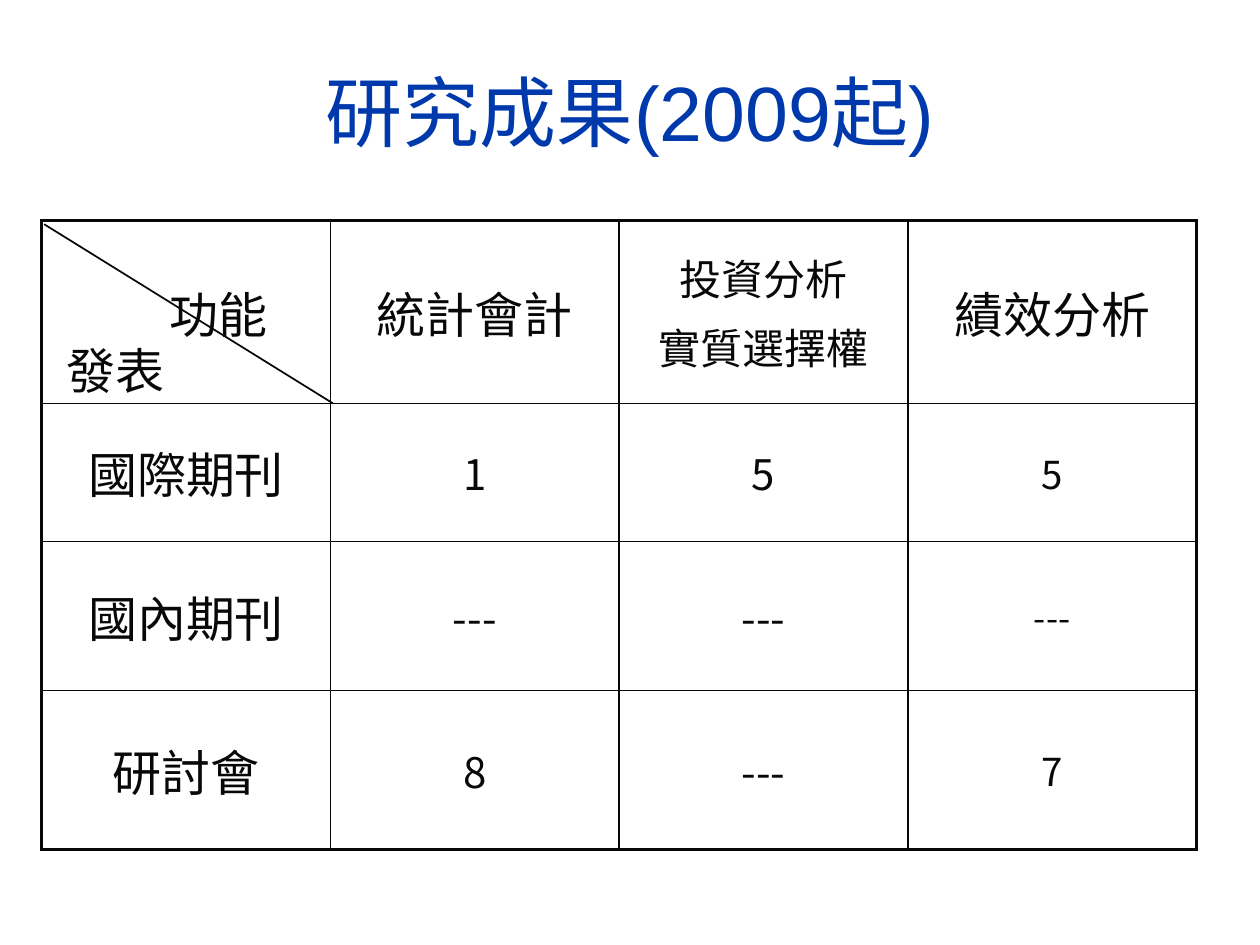
from lxml.etree import SubElement
from pptx import Presentation
from pptx.dml.color import RGBColor
from pptx.enum.shapes import MSO_CONNECTOR
from pptx.enum.text import MSO_ANCHOR as ANCHOR, PP_ALIGN as ALIGN
from pptx.oxml.ns import qn
from pptx.util import Cm, Pt

BLUE = RGBColor(0x00, 0x39, 0xAC)
BLACK = RGBColor(0x08, 0x08, 0x08)
CJK = "Noto Sans CJK SC"

ROWS = [
    [("功能", 28), ("統計會計", 28), ("投資分析\n實質選擇權", 24), ("績效分析", 28)],
    [("國際期刊", 28), ("1", 24), ("5", 24), ("5", 22)],
    [("國內期刊", 28), ("---", 24), ("---", 24), ("---", 20)],
    [("研討會", 28), ("8", 24), ("---", 24), ("7", 22)],
]
ROW_HEIGHTS = [3.68, 2.79, 3.0, 3.2]
COL_WIDTH = 5.82
LEFT, TOP = 0.84, 4.45


class Deck:
    """Hold the style and the current slide, and draw each kind of element."""

    def __init__(self, prs):
        self.s = prs.slides.add_slide(prs.slide_layouts[6])
        self.thin, self.thick = Pt(1), Pt(2.25)

    def fill_text(self, tf, text, size, color=BLACK, font="Arial", align=ALIGN.CENTER):
        tf.word_wrap = True
        tf.text = text
        for i, p in enumerate(tf.paragraphs):
            p.alignment = align
            if i:
                p.space_before = Pt(size * 0.2)
            p.font.size, p.font.name = Pt(size), font
            p.font.color.rgb = color
            SubElement(p._p.pPr.find(qn("a:defRPr")), qn("a:ea"), typeface=CJK)

    def text(self, x, y, w, h, text, size, anchor=ANCHOR.TOP, **style):
        tf = self.s.shapes.add_textbox(Cm(x), Cm(y), Cm(w), Cm(h)).text_frame
        tf.vertical_anchor = anchor
        self.fill_text(tf, text, size, **style)

    def line(self, x1, y1, x2, y2):
        c = self.s.shapes.add_connector(
            MSO_CONNECTOR.STRAIGHT, Cm(x1), Cm(y1), Cm(x2), Cm(y2))
        c.line.color.rgb, c.line.width = BLACK, self.thin
        SubElement(c._element.spPr, qn("a:effectLst"))

    def border(self, cell, side, width):
        ln = SubElement(cell._tc.get_or_add_tcPr(), qn(f"a:ln{side}"), w=str(int(width)))
        fill = SubElement(ln, qn("a:solidFill"))
        SubElement(fill, qn("a:srgbClr"), val=str(BLACK))

    def table(self, x, y, col_width, heights, rows):
        n_rows, n_cols = len(rows), len(rows[0])
        table = self.s.shapes.add_table(
            n_rows, n_cols, Cm(x), Cm(y),
            Cm(col_width * n_cols), Cm(sum(heights))).table
        table.first_row = table.horz_banding = False
        for col in table.columns:
            col.width = Cm(col_width)
        for i, row in enumerate(rows):
            table.rows[i].height = Cm(heights[i])
            for j, (text, size) in enumerate(row):
                cell = table.cell(i, j)
                cell.vertical_anchor = ANCHOR.MIDDLE
                self.fill_text(cell.text_frame, text, size, font=CJK)
                outer = {"L": j == 0, "R": j == n_cols - 1,
                         "T": i == 0, "B": i == n_rows - 1}
                for side, edge in outer.items():
                    self.border(cell, side, self.thick if edge else self.thin)
                cell.fill.background()
        return table


def main():
    prs = Presentation()
    prs.slide_width, prs.slide_height = Cm(25.4), Cm(19.05)
    deck = Deck(prs)
    deck.text(0.84, 0.64, 23.72, 3.18, "研究成果(2009起)", 44,
              anchor=ANCHOR.MIDDLE, color=BLUE)
    table = deck.table(LEFT, TOP, COL_WIDTH, ROW_HEIGHTS, ROWS)
    table.cell(0, 0).margin_left = Cm(1.55)
    deck.line(LEFT + 0.05, TOP + 0.07, LEFT + COL_WIDTH + 0.05, TOP + ROW_HEIGHTS[0])
    deck.text(1.09, 6.73, 3.0, 1.45, "發表", 28, align=ALIGN.LEFT)
    prs.save("out.pptx")


if __name__ == "__main__":
    main()
